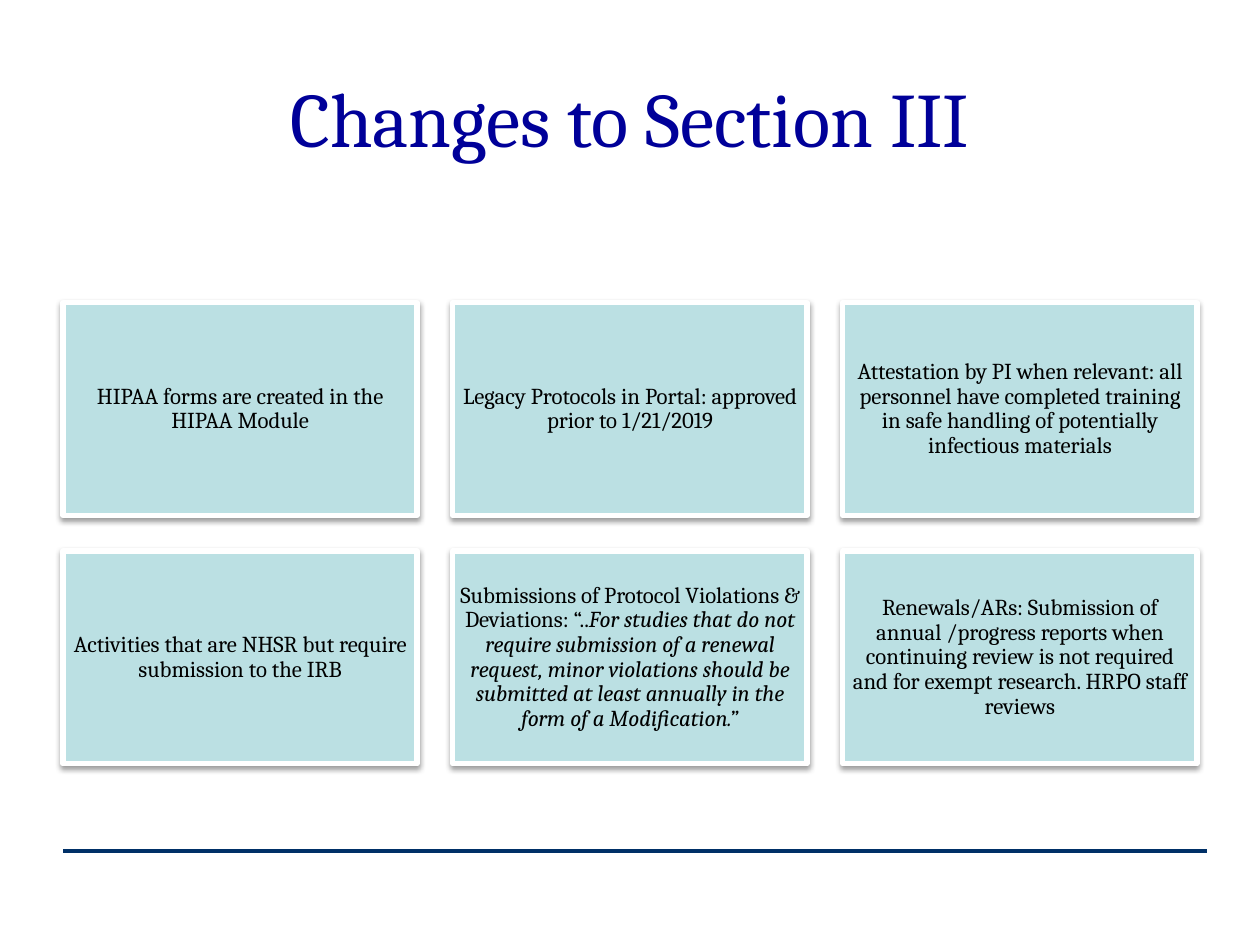
"""Build the slide on changes to Section III."""
from lxml import etree
from pptx import Presentation
from pptx import util as u
from pptx.dml.color import RGBColor
from pptx.enum import shapes, text
from pptx.oxml.ns import qn

NAVY = RGBColor(0x00, 0x00, 0x99)
RULE = RGBColor(0x00, 0x30, 0x67)
TEAL = RGBColor(0xBB, 0xE0, 0xE3)
WHITE = RGBColor(0xFF, 0xFF, 0xFF)
BLACK = RGBColor(0x00, 0x00, 0x00)
FACE = "Cambria"
LEFT, TOP = 1.27, 6.1
WIDE, HIGH = 7.14, 4.29
GAP = 0.72
COLS = 3
CARDS = [
    [("HIPAA forms are created in the HIPAA Module", False)],
    [("Legacy Protocols in Portal: approved prior to 1/21/2019", False)],
    [("Attestation by PI when relevant: all personnel have completed training "
      "in safe handling of potentially infectious materials", False)],
    [("Activities that are NHSR but require submission to the IRB", False)],
    [("Submissions of Protocol Violations & Deviations: “..", False),
     ("For studies that do not require submission of a renewal request, minor "
      "violations should be submitted at least annually in the form of a "
      "Modification.”", True)],
    [("Renewals/ARs: Submission of annual /progress reports when continuing "
      "review is not required and for exempt research. HRPO staff reviews", False)],
]


def add_run(para, words, size, color, slant=False):
    """Add one styled run to a paragraph."""
    run = para.add_run()
    run.text = words
    font = run.font
    font.name, font.size, font.italic = FACE, u.Pt(size), slant
    font.color.rgb = color


def add_shade(shape):
    """Give a shape a soft shadow below it."""
    shape.shadow.inherit = False
    list_ = shape._element.spPr.find(qn("a:effectLst"))
    shade = etree.SubElement(list_, qn("a:outerShdw"), blurRad=str(u.Pt(3.1)),
                             dist=str(u.Pt(1.6)), dir="5400000", rotWithShape="0")
    color = etree.SubElement(shade, qn("a:srgbClr"), val=str(BLACK))
    etree.SubElement(color, qn("a:alpha"), val="38000")


def add_title(slide, words):
    """Place and fill the title."""
    title = slide.shapes.title
    title.left, title.top = u.Cm(1.27), u.Cm(0.76)
    title.width, title.height = u.Cm(22.86), u.Cm(3.18)
    frame = title.text_frame
    frame.vertical_anchor = text.MSO_ANCHOR.MIDDLE
    para = frame.paragraphs[0]
    para.alignment = text.PP_ALIGN.CENTER
    add_run(para, words, 44, NAVY)


def add_rule(slide):
    """Draw the rule at the foot."""
    rule = slide.shapes.add_connector(shapes.MSO_CONNECTOR.STRAIGHT, u.Cm(1.27),
                                      u.Cm(17.15), u.Cm(24.33), u.Cm(17.15))
    rule.line.color.rgb = RULE
    rule.line.width = u.Pt(2.25)
    etree.SubElement(rule._element.spPr, qn("a:effectLst"))


def add_card(slide, left, top, parts):
    """Draw one framed card with its text."""
    card = slide.shapes.add_shape(shapes.MSO_SHAPE.RECTANGLE, u.Cm(left), u.Cm(top),
                                  u.Cm(WIDE), u.Cm(HIGH))
    card.fill.solid()
    card.fill.fore_color.rgb = TEAL
    card.line.color.rgb = WHITE
    card.line.width = u.Pt(3)
    add_shade(card)
    frame = card.text_frame
    frame.word_wrap = True
    frame.vertical_anchor = text.MSO_ANCHOR.MIDDLE
    frame.margin_left = frame.margin_right = u.Cm(0.13)
    frame.margin_top = frame.margin_bottom = u.Cm(0.13)
    para = frame.paragraphs[0]
    para.alignment = text.PP_ALIGN.CENTER
    para.line_spacing = 0.9
    for words, slant in parts:
        add_run(para, words, 13, BLACK, slant)


def main():
    """Build and save the slide."""
    deck = Presentation()
    deck.slide_width, deck.slide_height = u.Cm(25.4), u.Cm(19.05)
    slide = deck.slides.add_slide(deck.slide_layouts[5])
    add_rule(slide)
    add_title(slide, "Changes to Section III")
    for place, parts in enumerate(CARDS):
        row, col = divmod(place, COLS)
        add_card(slide, LEFT + col * (WIDE + GAP), TOP + row * (HIGH + GAP), parts)
    deck.save("out.pptx")


if __name__ == "__main__":
    main()
